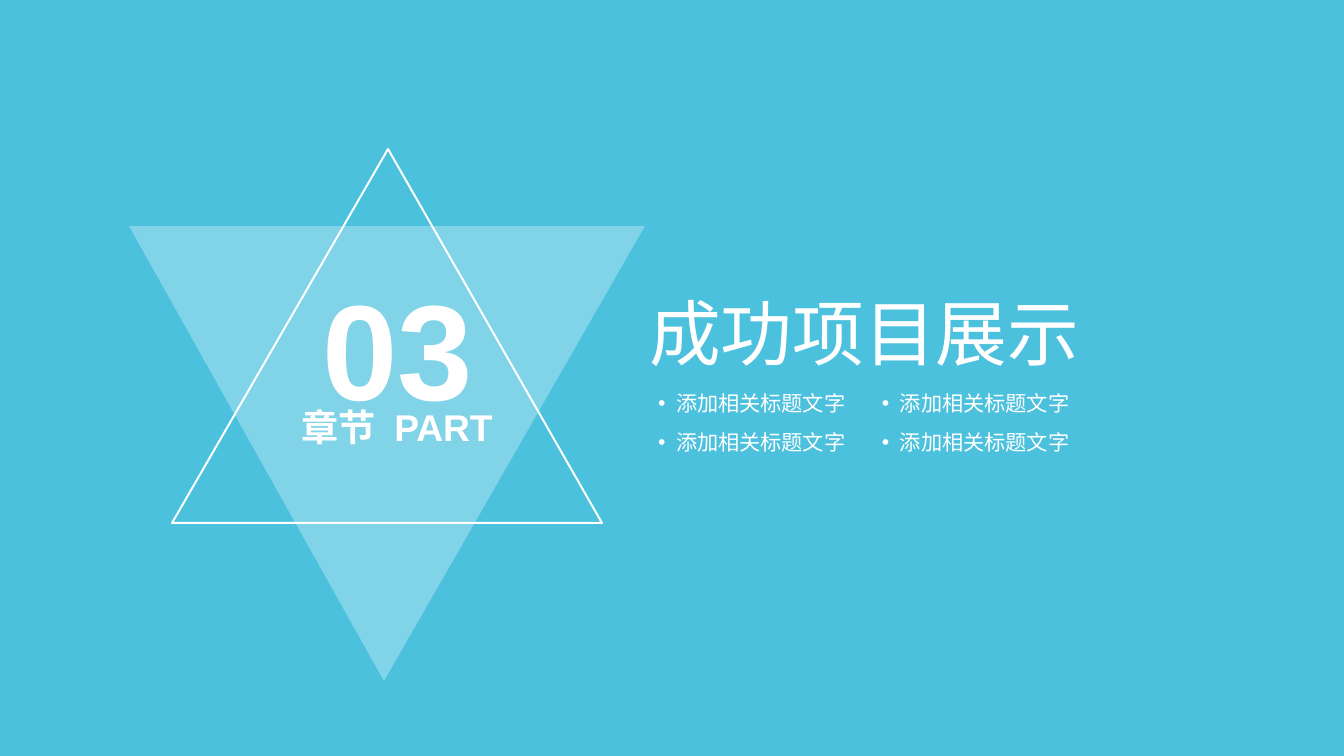
from lxml.etree import SubElement
from pptx import Presentation
from pptx.dml.color import RGBColor
from pptx.enum.text import MSO_ANCHOR, MSO_AUTO_SIZE, PP_ALIGN
from pptx.oxml.ns import qn
from pptx.util import Pt

PX = 9565  # EMU per pixel
WIDTH, HEIGHT = 1344, 756
COLORS = {"sky": "4BC1DD", "white": "FFFFFF"}
FONT = "Arial"
TOPICS = ["添加相关标题文字"] * 4


def color(name):
    return RGBColor.from_string(COLORS[name])


def format_text(shape, size, bold=False, align=PP_ALIGN.LEFT):
    frame = shape.text_frame
    frame.word_wrap = True
    frame.auto_size = MSO_AUTO_SIZE.NONE
    frame.vertical_anchor = MSO_ANCHOR.MIDDLE
    frame.margin_left = frame.margin_right = 0
    frame.margin_top = frame.margin_bottom = 0
    paragraph = frame.paragraphs[0]
    paragraph.alignment = align
    paragraph.font.name = FONT
    paragraph.font.size = Pt(size)
    paragraph.font.bold = bold
    paragraph.font.color.rgb = color("white")
    return paragraph


def add_label(slide, box, words, size, **style):
    label = slide.shapes.add_textbox(*(v * PX for v in box))
    for word in words:
        label.text_frame.paragraphs[0].add_run().text = word
    return format_text(label, size, **style)


def add_triangle(slide, corners):
    builder = slide.shapes.build_freeform(*corners[0], scale=PX)
    builder.add_line_segments(corners[1:], close=True)
    triangle = builder.convert_to_shape()
    triangle.shadow.inherit = False
    return triangle


def add_emblem(slide, x, y):
    # Translucent triangle pointing down
    veil = add_triangle(slide, [(x, y + 77), (x + 516, y + 77), (x + 255, y + 532)])
    veil.fill.solid()
    veil.fill.fore_color.rgb = color("white")
    veil.line.fill.background()
    tint = veil.fill._xPr.find(qn("a:solidFill"))[0]
    SubElement(tint, qn("a:alpha")).set("val", "30000")

    # Outlined triangle pointing up
    outline = add_triangle(slide, [(x + 259, y), (x + 473, y + 374), (x + 43, y + 374)])
    outline.fill.background()
    outline.line.color.rgb = color("white")
    outline.line.width = Pt(1.5)

    # Chapter number and caption
    centred = {"bold": True, "align": PP_ALIGN.CENTER}
    add_label(slide, (x + 180, y + 115, 177, 164), ["03"], 102, **centred)
    caption = add_label(slide, (x + 87, y + 255, 362, 45),
                        ["章节", " ", "PART"], 28, **centred)
    caption.runs[1]._r.get_or_add_rPr().set("spc", "780")


def add_heading(slide, x, y):
    # Chapter title
    title = slide.shapes.title
    title.left, title.top, title.width, title.height = (
        v * PX for v in (x, y, 467, 87))
    title.text_frame.text = "成功项目展示"
    format_text(title, 54)

    # Topics in a grid of two columns
    for i, topic in enumerate(TOPICS):
        row, column = divmod(i, 2)
        box = (x + column * 224, y + 98 + row * 39, 209, 35)
        properties = add_label(slide, box, [topic], 16)._p.get_or_add_pPr()
        properties.set("marL", str(27 * PX))
        properties.set("indent", str(-18 * PX))
        SubElement(properties, qn("a:buFont")).set("typeface", FONT)
        SubElement(properties, qn("a:buChar")).set("char", "•")
        # Bullets come before the default run properties
        properties.append(properties.find(qn("a:defRPr")))


def main():
    deck = Presentation()
    deck.slide_width, deck.slide_height = WIDTH * PX, HEIGHT * PX
    slide = deck.slides.add_slide(deck.slide_layouts[5])
    slide.background.fill.solid()
    slide.background.fill.fore_color.rgb = color("sky")
    add_emblem(slide, 129, 149)
    add_heading(slide, 649, 288)
    deck.save("out.pptx")


if __name__ == "__main__":
    main()
